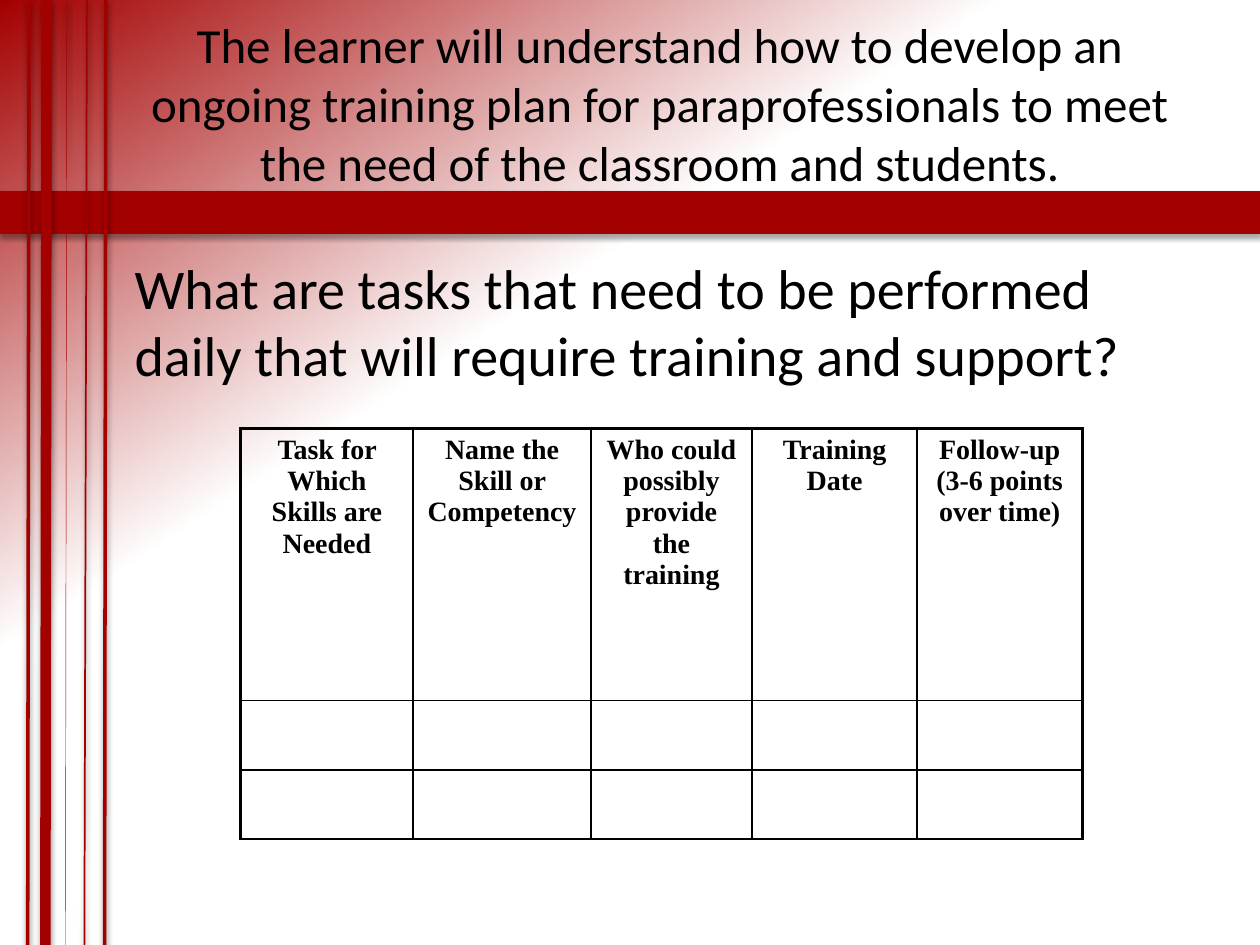
import dataclasses

import pptx
import pptx.dml.color
import pptx.enum.shapes
import pptx.enum.text
import pptx.oxml
import pptx.oxml.ns
import pptx.util
from pptx.util import Inches, Pt

ALIGN = pptx.enum.text.PP_ALIGN
ANCHOR = pptx.enum.text.MSO_ANCHOR
NAMESPACE = pptx.oxml.ns.nsdecls("a")


@dataclasses.dataclass(frozen=True)
class Theme:
    red: str = "A30000"
    white: str = "FFFFFF"
    black: str = "000000"
    text_font: str = "Calibri"
    table_font: str = "Times New Roman"
    title_size: int = 28
    body_size: int = 32
    table_size: int = 16
    outer_border: float = 2.25
    inner_border: float = 1


THEME = Theme()

TITLE = ("The learner will understand how to develop an ongoing training plan "
         "for paraprofessionals to meet the need of the classroom and students.")
QUESTION = ("What are tasks that need to be performed daily "
            "that will require training and support?")
HEADERS = ["Task for Which Skills are Needed", "Name the Skill or Competency",
           "Who could possibly provide the training", "Training Date",
           "Follow-up (3-6 points over time)"]
COLUMN_WIDTHS = [1.37, 1.41, 1.28, 1.31, 1.31]
ROW_HEIGHTS = [2.16, 0.55, 0.55]
# Top x, bottom x (inches) and width (points) of each stripe
STRIPES = [(0.23, 0.22, 2), (0.37, 0.36, 6), (0.53, 0.52, 0.25),
           (0.69, 0.67, 1), (0.84, 0.83, 2)]


def rgb(color):
    return pptx.dml.color.RGBColor.from_string(color)


def apply_format(target, values):
    for name, value in values.items():
        setattr(target, name, value)


def write_text(frame, text, size, font, align, bold=False, space_before=0):
    frame.text = text
    paragraph = frame.paragraphs[0]
    apply_format(paragraph, {"alignment": align, "space_before": Pt(space_before)})
    run_font = paragraph.runs[0].font
    apply_format(run_font, {"size": Pt(size), "name": font, "bold": bold})
    run_font.color.rgb = rgb(THEME.black)


def add_shadow(shape, opacity, distance):
    """Append a soft downward shadow; the line must already be formatted."""
    shape._element.spPr.append(pptx.oxml.parse_xml(
        f'<a:effectLst {NAMESPACE}><a:outerShdw blurRad="{Pt(3.1)}" '
        f'dist="{Pt(distance)}" dir="5400000" rotWithShape="0">'
        f'<a:srgbClr val="{THEME.black}"><a:alpha val="{opacity * 1000}"/>'
        f'</a:srgbClr></a:outerShdw></a:effectLst>'))


def set_background(slide):
    fill = slide.background.fill
    fill.gradient()
    fill.gradient_angle = 360 - 57
    stops = [(0, THEME.red), (0.37, THEME.white)]
    for stop, (position, color) in zip(fill.gradient_stops, stops):
        stop.position = position
        stop.color.rgb = rgb(color)


def add_bar(slide):
    bar = slide.shapes.add_shape(pptx.enum.shapes.MSO_SHAPE.RECTANGLE,
                                 0, Inches(1.52), Inches(10), Inches(0.33))
    bar.fill.solid()
    bar.fill.fore_color.rgb = rgb(THEME.red)
    bar.line.color.rgb = rgb(THEME.red)
    bar.line.width = Pt(0.75)
    add_shadow(bar, 35, 1.8)


def add_stripe(slide, top_x, bottom_x, width):
    stripe = slide.shapes.add_connector(
        pptx.enum.shapes.MSO_CONNECTOR.STRAIGHT,
        Inches(top_x), 0, Inches(bottom_x), Inches(7.5))
    stripe.line.color.rgb = rgb(THEME.red)
    stripe.line.width = Pt(width)
    add_shadow(stripe, 38, 1.6)


def add_title(slide):
    title = slide.shapes.title
    apply_format(title, {"left": Inches(0.97), "top": Inches(0.19),
                         "width": Inches(8.53), "height": Inches(1.25)})
    write_text(title.text_frame, TITLE, THEME.title_size, THEME.text_font, ALIGN.CENTER)
    apply_format(title.text_frame, {
        "word_wrap": True, "vertical_anchor": ANCHOR.MIDDLE,
        "auto_size": pptx.enum.text.MSO_AUTO_SIZE.NONE})
    # Keep the title in front of the bar and stripes
    slide.shapes._spTree.append(title._element)


def add_question(slide):
    box = slide.shapes.add_textbox(Inches(0.97), Inches(1.96),
                                   Inches(8.53), Inches(5.16))
    box.text_frame.word_wrap = True
    write_text(box.text_frame, QUESTION, THEME.body_size, THEME.text_font,
               ALIGN.LEFT, space_before=THEME.body_size * 0.2)


def set_borders(cell, widths):
    properties = cell._tc.get_or_add_tcPr()
    for index, (side, width) in enumerate(widths.items()):
        properties.insert(index, pptx.oxml.parse_xml(
            f'<a:ln{side} {NAMESPACE} w="{Pt(width)}"><a:solidFill>'
            f'<a:srgbClr val="{THEME.black}"/></a:solidFill></a:ln{side}>'))


def add_training_table(slide):
    table = slide.shapes.add_table(
        len(ROW_HEIGHTS), len(COLUMN_WIDTHS), Inches(1.91), Inches(3.4),
        Inches(sum(COLUMN_WIDTHS)), Inches(sum(ROW_HEIGHTS))).table
    apply_format(table, {"first_row": False, "horz_banding": False})
    for column, width in zip(table.columns, COLUMN_WIDTHS):
        column.width = Inches(width)
    for row, height in zip(table.rows, ROW_HEIGHTS):
        row.height = Inches(height)

    outer, inner = THEME.outer_border, THEME.inner_border
    last_column = len(COLUMN_WIDTHS) - 1
    for row_index, row in enumerate(table.rows):
        for column_index, cell in enumerate(row.cells):
            cell.fill.background()
            set_borders(cell, {
                "L": outer if column_index == 0 else inner,
                "R": outer if column_index == last_column else inner,
                "T": outer if row_index == 0 else inner,
                "B": inner})
    for cell, header in zip(table.rows[0].cells, HEADERS):
        apply_format(cell, {"margin_left": Inches(0.11), "margin_right": Inches(0.11),
                            "margin_top": Inches(0.05), "margin_bottom": Inches(0.05)})
        write_text(cell.text_frame, header, THEME.table_size, THEME.table_font,
                   ALIGN.CENTER, bold=True, space_before=THEME.table_size * 0.2)


def main():
    presentation = pptx.Presentation()
    apply_format(presentation, {"slide_width": Inches(10), "slide_height": Inches(7.5)})
    slide = presentation.slides.add_slide(presentation.slide_layouts[5])
    set_background(slide)
    add_bar(slide)
    for stripe in STRIPES:
        add_stripe(slide, *stripe)
    add_title(slide)
    add_question(slide)
    add_training_table(slide)
    presentation.save("out.pptx")


if __name__ == "__main__":
    main()
